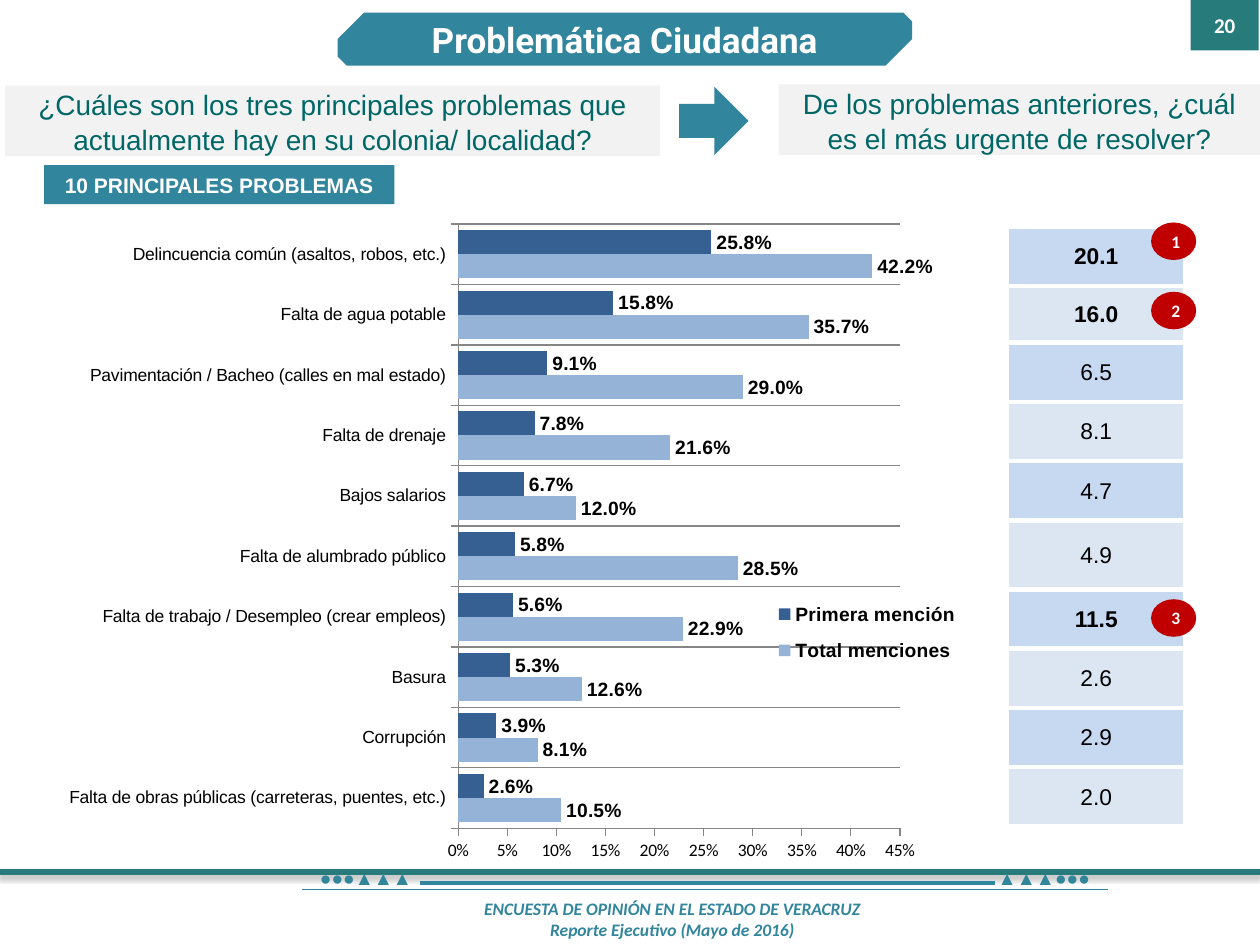
from lxml import etree
from pptx import Presentation
from pptx import util as u
from pptx.chart.data import CategoryChartData
from pptx.dml.color import RGBColor
from pptx.enum import chart as charts, shapes, text
from pptx.oxml import parse_xml
from pptx.oxml.ns import nsdecls, qn

COLORS = {
    "white": "FFFFFF", "green": "277C7B", "teal": "31859C", "ornament": "31869B",
    "question": "006666", "gray": "F2F2F2", "black": "000000", "axis": "868686",
    "first": "376092", "total": "95B3D7", "cell": "C6D9F1", "cell_alt": "DCE6F2",
    "rank": "C00000",
}
NO_STYLE = "{2D5ABB26-0587-4C30-8999-92F81FD0307C}"
KINDS = shapes.MSO_SHAPE


def rgb(name):
    return RGBColor.from_string(COLORS[name])


def inches(*lengths):
    return [u.Inches(length) for length in lengths]


def set_layout(parent, index, x, y, w, h, inner=False):
    for old in parent.findall(qn("c:layout")):
        parent.remove(old)
    target = '<c:layoutTarget val="inner"/>' if inner else ""
    parent.insert(index, parse_xml(
        f'<c:layout {nsdecls("c")}><c:manualLayout>{target}'
        '<c:xMode val="edge"/><c:yMode val="edge"/>'
        f'<c:x val="{x}"/><c:y val="{y}"/><c:w val="{w}"/><c:h val="{h}"/>'
        '</c:manualLayout></c:layout>'))


class Page:
    def __init__(self, slide):
        self.slide = slide

    def font(self, font, size, name="Arial", color="black", bold=False, italic=False):
        font.size, font.name = u.Pt(size), name
        font.bold, font.italic = bold, italic
        font.color.rgb = rgb(color)

    def add_lines(self, frame, lines, leading=None, **style):
        for number, line in enumerate(lines):
            paragraph = frame.add_paragraph() if number else frame.paragraphs[0]
            paragraph.alignment = text.PP_ALIGN.CENTER
            if leading:
                paragraph.line_spacing = u.Pt(leading)
            run = paragraph.add_run()
            run.text = line
            self.font(run.font, **style)

    def frame(self, frame, insets, anchor):
        frame.word_wrap = True
        frame.vertical_anchor = anchor
        (frame.margin_left, frame.margin_top,
         frame.margin_right, frame.margin_bottom) = inches(*insets)

    def shape(self, kind, box, fill, outline=None, adjust=(), lines=(),
              insets=(0.1, 0.05, 0.1, 0.05), anchor=text.MSO_ANCHOR.MIDDLE, **style):
        shape = self.slide.shapes.add_shape(kind, *inches(*box))
        shape.shadow.inherit = False
        shape.fill.solid()
        shape.fill.fore_color.rgb = rgb(fill)
        if outline:
            shape.line.color.rgb = rgb(outline)
            shape.line.width = u.Pt(2)
        else:
            shape.line.fill.background()
        for number, value in enumerate(adjust):
            shape.adjustments[number] = value
        self.frame(shape.text_frame, insets, anchor)
        self.add_lines(shape.text_frame, lines, **style)

    def label(self, box, lines, **style):
        frame = self.slide.shapes.add_textbox(*inches(*box)).text_frame
        self.frame(frame, (0.04,) * 4, text.MSO_ANCHOR.MIDDLE)
        self.add_lines(frame, lines, **style)

    def rule(self, left, right, y, color, width, shadow=False):
        line = self.slide.shapes.add_connector(
            shapes.MSO_CONNECTOR.STRAIGHT, *inches(left, y, right, y))
        line.line.color.rgb = rgb(color)
        line.line.width = u.Pt(width)
        effects = etree.SubElement(line._element.spPr, qn("a:effectLst"))
        if shadow:
            effects.append(parse_xml(
                f'<a:outerShdw {nsdecls("a")} blurRad="{u.Pt(3.1)}" dist="{u.Pt(1.8)}" '
                'dir="5400000" rotWithShape="0"><a:srgbClr val="000000">'
                '<a:alpha val="35000"/></a:srgbClr></a:outerShdw>'))

    def column(self, left, top, width, rows, size, color="black",
               anchor=text.MSO_ANCHOR.MIDDLE, fills=(), border=None):
        total = sum(height for _, height, _ in rows)
        table = self.slide.shapes.add_table(
            len(rows), 1, *inches(left, top, width, total)).table
        table.first_row = table.horz_banding = False
        table._tbl.tblPr.find(qn("a:tableStyleId")).text = NO_STYLE
        for number, (value, height, bold) in enumerate(rows):
            table.rows[number].height = u.Inches(height)
            cell = table.cell(number, 0)
            cell.vertical_anchor = anchor
            (cell.margin_left, cell.margin_top,
             cell.margin_right, cell.margin_bottom) = inches(0.01, 0.01, 0.01, 0)
            self.add_lines(cell.text_frame, [value], size=size, color=color, bold=bold)
            if border:
                for side in ("lnL", "lnR", "lnT", "lnB"):
                    cell._tc.get_or_add_tcPr().append(parse_xml(
                        f'<a:{side} {nsdecls("a")} w="{u.Pt(3)}"><a:solidFill>'
                        f'<a:srgbClr val="{COLORS[border]}"/></a:solidFill></a:{side}>'))
            if fills:
                cell.fill.solid()
                cell.fill.fore_color.rgb = rgb(fills[number % len(fills)])
            else:
                cell.fill.background()

    def bars(self, box, problems):
        data = CategoryChartData(number_format="0.0%")
        data.categories = [name for name, _, _ in reversed(problems)]
        data.add_series("Total menciones", [total for _, _, total in reversed(problems)])
        data.add_series("Primera mención", [first for _, first, _ in reversed(problems)])
        chart = self.slide.shapes.add_chart(
            charts.XL_CHART_TYPE.BAR_CLUSTERED, *inches(*box), data).chart
        chart.has_title = False
        self.font(chart.font, 10, "Calibri")
        plot = chart.plots[0]
        plot.gap_width, plot.overlap = 51, 0
        plot.vary_by_categories = False
        for series, color in zip(plot.series, ("total", "first")):
            series.format.fill.solid()
            series.format.fill.fore_color.rgb = rgb(color)
            labels = series.data_labels
            labels.show_value = True
            labels.number_format, labels.number_format_is_linked = "####.0%", False
            labels.position = charts.XL_LABEL_POSITION.OUTSIDE_END
            self.font(labels.font, 11, bold=True)
        problem_axis, share_axis = chart.category_axis, chart.value_axis
        problem_axis.has_major_gridlines = True
        share_axis.has_major_gridlines = False
        share_axis.minimum_scale, share_axis.maximum_scale = 0, 0.45
        share_axis.major_unit = 0.05
        share_axis.tick_labels.number_format = "0%"
        share_axis.tick_labels.number_format_is_linked = False
        for axis, name in ((problem_axis, "Arial"), (share_axis, "Calibri")):
            axis.major_tick_mark = charts.XL_TICK_MARK.OUTSIDE
            axis.format.line.color.rgb = rgb("axis")
            self.font(axis.tick_labels.font, 10, name)
        problem_axis.major_gridlines.format.line.color.rgb = rgb("axis")
        chart.has_legend = True
        legend = chart.legend
        legend.position = charts.XL_LEGEND_POSITION.RIGHT
        legend.include_in_layout = False
        self.font(legend.font, 11, bold=True)
        set_layout(legend._element, 1, 0.78, 0.58, 0.21, 0.13)
        set_layout(chart._chartSpace.chart.plotArea, 0, 0.45, 0.03, 0.47, 0.91, inner=True)


PROBLEMS = [
    ("Delincuencia común (asaltos, robos, etc.)", 0.258, 0.422),
    ("Falta de agua potable", 0.158, 0.357),
    ("Pavimentación / Bacheo (calles en mal estado)", 0.091, 0.29),
    ("Falta de drenaje", 0.078, 0.216),
    ("Bajos salarios", 0.067, 0.12),
    ("Falta de alumbrado público", 0.058, 0.285),
    ("Falta de trabajo / Desempleo (crear empleos)", 0.056, 0.229),
    ("Basura", 0.053, 0.126),
    ("Corrupción", 0.039, 0.081),
    ("Falta de obras públicas (carreteras, puentes, etc.)", 0.026, 0.105),
]
URGENCY = ["20.1", "16.0", "6.5", "8.1", "4.7", "4.9", "11.5", "2.6", "2.9", "2.0"]
HEIGHTS = {"16.0": 0.45, "4.9": 0.55}
RANK_TOPS = {"20.1": 1.78, "16.0": 2.33, "11.5": 4.77}


def main():
    deck = Presentation()
    deck.slide_width, deck.slide_height = inches(10, 7.5)
    page = Page(deck.slides.add_slide(deck.slide_layouts[6]))

    page.shape(KINDS.RECTANGLE, (0, 6.92, 10, 0.58), "white", "white")
    page.rule(-0.02, 10, 6.92, "green", 3, shadow=True)
    page.label((3.05, 7.08, 4.57, 0.42),
               ["ENCUESTA DE OPINIÓN EN EL ESTADO DE VERACRUZ",
                "Reporte Ejecutivo (Mayo de 2016)"],
               size=10, name="Calibri", color="teal", bold=True, italic=True)
    page.rule(3.33, 7.9, 7.01, "teal", 2)
    page.rule(2.4, 8.79, 7.06, "teal", 0.75)
    for left, ornament in ((2.49, "●●●▲▲▲"), (7.87, "▲▲▲●●●")):
        page.column(left, 6.85, 0.83, [(ornament, 0.21, False)], 11, "ornament",
                    text.MSO_ANCHOR.BOTTOM)

    page.shape(KINDS.RECTANGLE, (9.45, 0, 0.54, 0.4), "green", lines=["20"],
               size=12, name="Calibri", color="white", bold=True)
    page.shape(KINDS.SNIP_2_DIAG_RECTANGLE, (2.68, 0.1, 4.56, 0.42), "teal",
               adjust=(0.5, 0.17), lines=["Problemática Ciudadana"],
               size=20, name="Roboto", color="white", bold=True)
    question = dict(size=16, color="question", leading=20)
    page.shape(KINDS.RECTANGLE, (0.04, 0.68, 5.2, 0.56), "gray", insets=(0,) * 4,
               anchor=text.MSO_ANCHOR.TOP, lines=[
                   "¿Cuáles son los tres principales problemas que "
                   "actualmente hay en su colonia/ localidad?"], **question)
    page.shape(KINDS.RECTANGLE, (0.35, 1.31, 2.78, 0.31), "teal",
               insets=(0.04, 0.05, 0.04, 0.05), anchor=text.MSO_ANCHOR.TOP,
               lines=["10 PRINCIPALES PROBLEMAS"],
               size=12, color="white", bold=True, leading=15)
    page.shape(KINDS.RECTANGLE, (6.18, 0.67, 3.82, 0.56), "gray", insets=(0.1, 0, 0.1, 0),
               lines=["De los problemas anteriores, ¿cuál es el más urgente de resolver?"],
               **question)
    page.shape(KINDS.RIGHT_ARROW, (5.39, 0.69, 0.55, 0.54), "teal")

    page.bars((0.28, 1.62, 7.46, 5.27), PROBLEMS)
    page.column(7.99, 1.8, 1.42,
                [(value, HEIGHTS.get(value, 0.47), value in RANK_TOPS) for value in URGENCY],
                13, fills=("cell", "cell_alt"), border="white")
    for rank, top in enumerate(RANK_TOPS.values(), 1):
        page.shape(KINDS.OVAL, (9.15, top, 0.33, 0.27), "rank", "rank", lines=[str(rank)],
                   size=10, name="Calibri", color="white", bold=True)
    deck.save("out.pptx")


if __name__ == "__main__":
    main()
